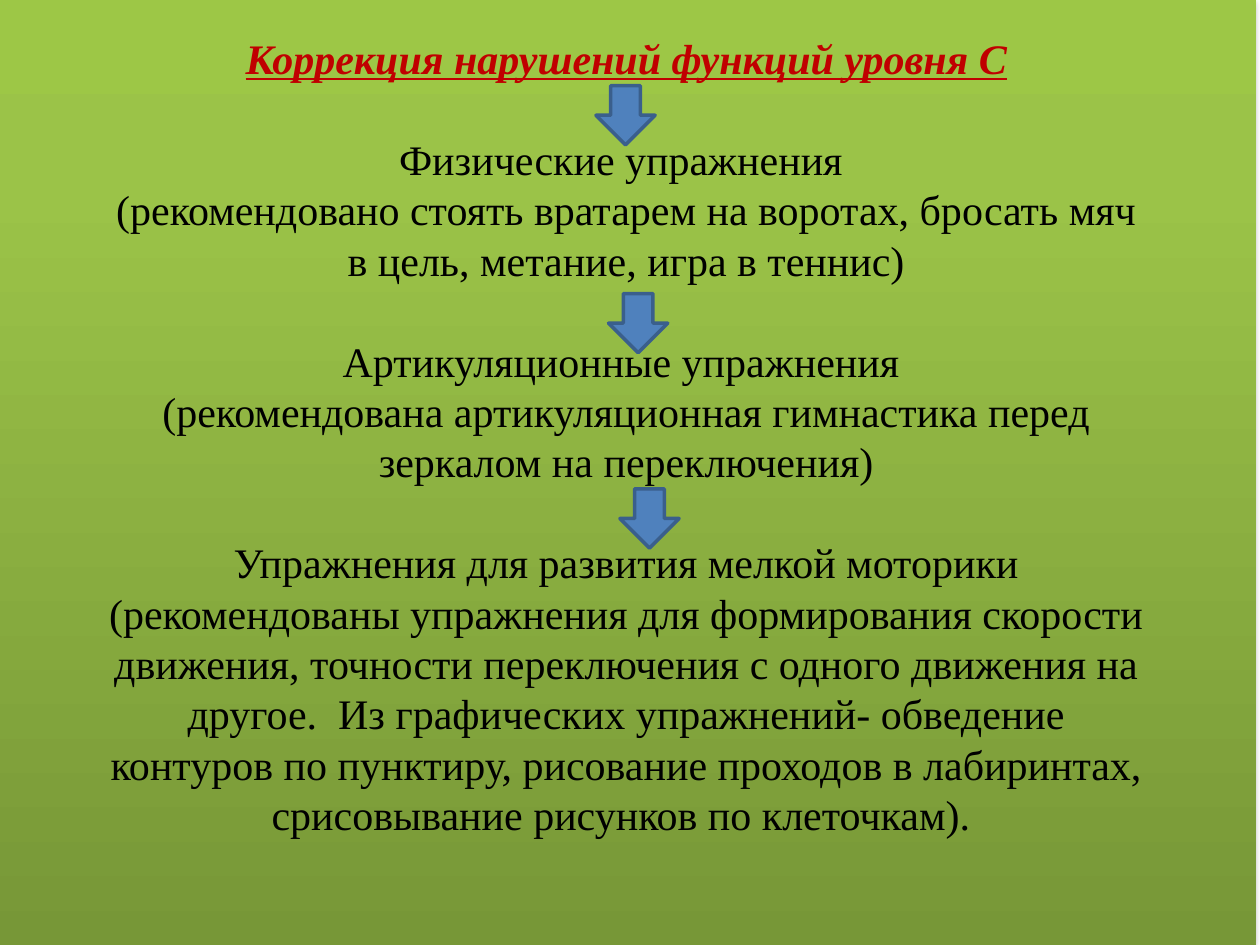
from lxml import etree
from pptx import Presentation
from pptx import util as u
from pptx.dml.color import RGBColor
from pptx.enum import shapes, text
from pptx.oxml import parse_xml
from pptx.oxml.ns import nsdecls, qn

COLORS = {
    "title": "C00000",
    "body": "000000",
    "arrow": "4F81BD",
    "arrow_edge": "3A5F8C",
    "shadow": "000000",
}
BACKDROP_STOPS = [(0, "779737"), (80, "9BC348"), (100, "9DC746")]
FONT = "Times New Roman"
LINE_HEIGHT = u.Pt(28.8)

TITLE = "Коррекция нарушений функций уровня C"
# Each group opens with a one-line gap above it
EXERCISE_GROUPS = [
    ["Физические упражнения ",
     "(рекомендовано стоять вратарем на воротах, бросать мяч в цель, "
     "метание, игра в теннис)"],
    ["Артикуляционные упражнения ",
     "(рекомендована артикуляционная гимнастика перед зеркалом "
     "на переключения)"],
    ["Упражнения для развития мелкой моторики (рекомендованы упражнения "
     "для формирования скорости движения, точности переключения с одного "
     "движения на другое.  Из графических упражнений- обведение контуров "
     "по пунктиру, рисование проходов в лабиринтах, срисовывание рисунков "
     "по клеточкам). "],
]
ARROW_SIZE = 0.47
ARROW_CORNERS = [(4.73, 0.68), (4.83, 2.33), (4.92, 3.88)]


def rgb(name):
    return RGBColor.from_string(COLORS[name])


def add_backdrop(slide):
    """Full-slide rectangle with a vertical gradient and a soft shadow."""
    backdrop = slide.shapes.add_shape(
        shapes.MSO_SHAPE.RECTANGLE,
        u.Inches(-0.03), u.Inches(0), u.Inches(10), u.Inches(7.5))
    backdrop.line.fill.background()
    stops = "".join(
        f'<a:gs pos="{pos * 1000}"><a:srgbClr val="{color}"/></a:gs>'
        for pos, color in BACKDROP_STOPS)
    gradient = parse_xml(
        f'<a:gradFill {nsdecls("a")} rotWithShape="1"><a:gsLst>{stops}</a:gsLst>'
        '<a:lin ang="16200000" scaled="0"/></a:gradFill>')
    properties = backdrop.element.spPr
    properties.find(qn("a:prstGeom")).addnext(gradient)

    backdrop.shadow.inherit = False
    shadow = etree.SubElement(
        properties.find(qn("a:effectLst")), qn("a:outerShdw"),
        blurRad=str(u.Pt(3.1)), dist=str(u.Pt(1.8)), dir="5400000",
        rotWithShape="0")
    color = etree.SubElement(shadow, qn("a:srgbClr"), val=COLORS["shadow"])
    etree.SubElement(color, qn("a:alpha"), val="35000")


def add_line(paragraph, words, color="body", emphasis=False, gap=False):
    paragraph.alignment = text.PP_ALIGN.CENTER
    paragraph.line_spacing = LINE_HEIGHT
    paragraph.space_before = LINE_HEIGHT if gap else u.Pt(0)
    run = paragraph.add_run()
    run.text = words
    font = run.font
    font.name, font.size = FONT, u.Pt(24)
    font.bold = font.italic = font.underline = emphasis
    font.color.rgb = rgb(color)


def add_recommendations(slide):
    """Title and the exercise groups in one centred column."""
    column = slide.shapes.add_textbox(
        u.Inches(0.72), u.Inches(0.21), u.Inches(8.5), u.Inches(6.56))
    frame = column.text_frame
    frame.word_wrap = True
    frame.auto_size = text.MSO_AUTO_SIZE.SHAPE_TO_FIT_TEXT
    add_line(frame.paragraphs[0], TITLE, "title", emphasis=True)
    for group in EXERCISE_GROUPS:
        for index, words in enumerate(group):
            add_line(frame.add_paragraph(), words, gap=index == 0)


def add_down_arrow(slide, left, top):
    arrow = slide.shapes.add_shape(
        shapes.MSO_SHAPE.DOWN_ARROW, u.Inches(left), u.Inches(top),
        u.Inches(ARROW_SIZE), u.Inches(ARROW_SIZE))
    arrow.shadow.inherit = False
    arrow.fill.solid()
    arrow.fill.fore_color.rgb = rgb("arrow")
    arrow.line.color.rgb = rgb("arrow_edge")
    arrow.line.width = u.Pt(2)


def main():
    deck = Presentation()
    deck.slide_width, deck.slide_height = u.Inches(10), u.Inches(7.5)
    slide = deck.slides.add_slide(deck.slide_layouts[6])

    add_backdrop(slide)
    add_recommendations(slide)
    # Arrows leading from one group to the next
    for left, top in ARROW_CORNERS:
        add_down_arrow(slide, left, top)

    deck.save("out.pptx")


if __name__ == "__main__":
    main()
